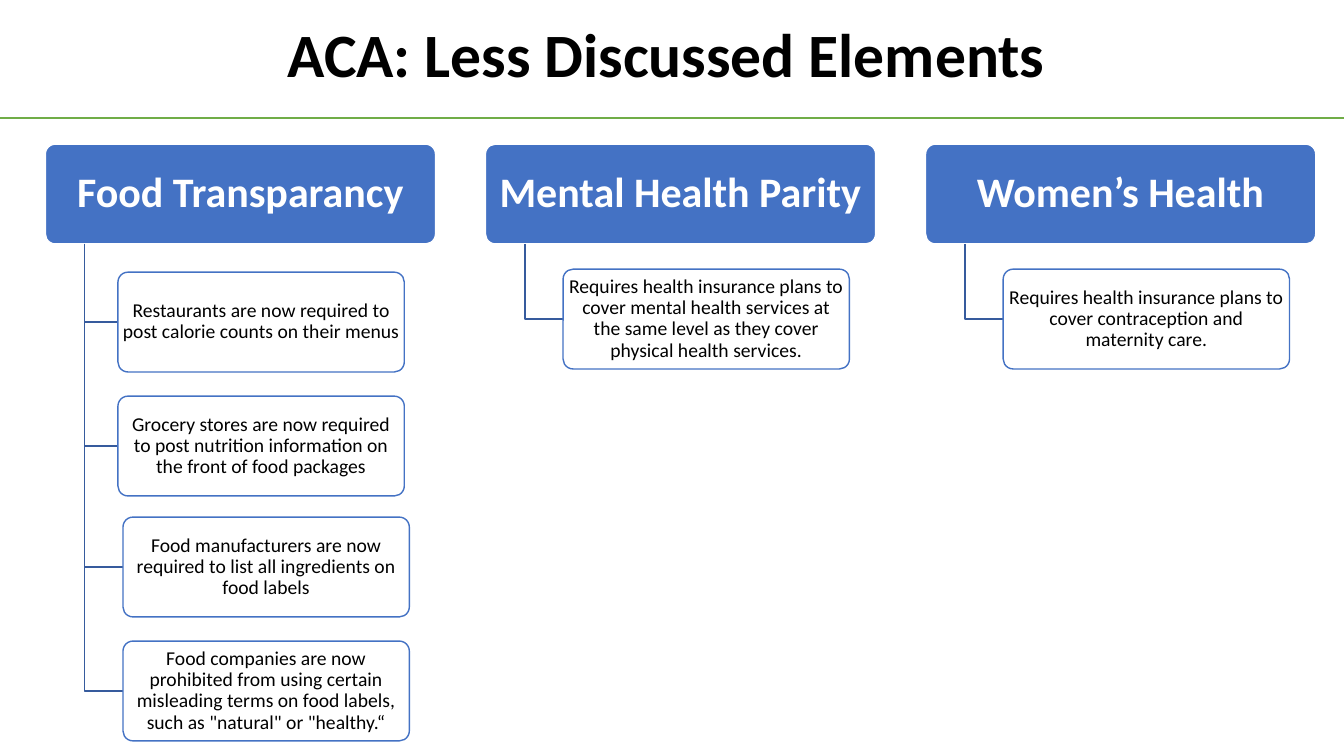
import pptx
import pptx.dml.color
import pptx.enum.shapes
import pptx.enum.text
import pptx.oxml.ns
import pptx.util
from lxml import etree

Inches = pptx.util.Inches
Pt = pptx.util.Pt
ALIGN = pptx.enum.text.PP_ALIGN
MIDDLE = pptx.enum.text.MSO_ANCHOR.MIDDLE

COLUMN_LEFT, COLUMN_STEP = 0.45, 4.365
HEADER_TOP, HEADER_W, BOX_H = 1.43, 3.87, 0.99
ITEM_W, STEM_INDENT = 2.84, 0.39

COLUMNS = [
    ("Food Transparancy", [
        (0.72, 2.7, "Restaurants are now required to post calorie counts on their menus"),
        (0.72, 3.93, "Grocery stores are now required to post nutrition information on "
                     "the front of food packages"),
        (0.77, 5.13, "Food manufacturers are now required to list all ingredients on food labels"),
        (0.77, 6.36, "Food companies are now prohibited from using certain misleading terms "
                     "on food labels, such as \"natural\" or \"healthy.“"),
    ]),
    ("Mental Health Parity", [
        (0.77, 2.67, "Requires health insurance plans to cover mental health services at "
                     "the same level as they cover physical health services."),
    ]),
    ("Women’s Health", [
        (0.77, 2.67, "Requires health insurance plans to cover contraception and maternity care."),
    ]),
]


def rgb(value):
    return pptx.dml.color.RGBColor.from_string(value)


def apply(target, values):
    for name, value in values.items():
        setattr(target, name, value)


class Deck:
    font = "Calibri"
    accent, stem_color, rule_color = "4472C4", "365B9D", "70AD47"
    header = {"size": Pt(30), "bold": True}
    item = {"size": Pt(14), "bold": False}
    heading = {"size": Pt(44), "bold": True}

    def __init__(self, prs):
        self.s = prs.slides.add_slide(prs.slide_layouts[5])

    def text(self, sp, words, style, color, align, inset):
        tf = sp.text_frame
        apply(tf, {
            "word_wrap": True,
            "auto_size": pptx.enum.text.MSO_AUTO_SIZE.NONE,
            "vertical_anchor": MIDDLE,
            "margin_left": Inches(inset[0]), "margin_right": Inches(inset[0]),
            "margin_top": Inches(inset[1]), "margin_bottom": Inches(inset[1]),
        })
        p = tf.paragraphs[0]
        apply(p, {"alignment": align, "line_spacing": 0.9})
        r = p.add_run()
        r.text = words
        apply(r.font, {"name": self.font, **style})
        r.font.color.rgb = rgb(color)

    def title(self, words):
        sp = self.s.shapes.title
        apply(sp, {"left": Inches(2.75), "top": Inches(0.15),
                   "width": Inches(10), "height": Inches(0.85)})
        self.text(sp, words, self.heading, "000000", ALIGN.LEFT, (0.1, 0.05))

    def rule(self, y):
        cx = self.s.shapes.add_connector(
            pptx.enum.shapes.MSO_CONNECTOR.STRAIGHT,
            0, Inches(y), Inches(13.33), Inches(y))
        cx.line.color.rgb = rgb(self.rule_color)
        cx.line.width = Pt(1.25)
        etree.SubElement(cx._element.spPr, pptx.oxml.ns.qn("a:effectLst"))

    def box(self, x, y, w, words, style, fill, line, color, inset, opacity=100):
        sp = self.s.shapes.add_shape(
            pptx.enum.shapes.MSO_SHAPE.ROUNDED_RECTANGLE,
            Inches(x), Inches(y), Inches(w), Inches(BOX_H))
        sp.adjustments[0] = 0.1
        sp.shadow.inherit = False
        sp.fill.solid()
        sp.fill.fore_color.rgb = rgb(fill)
        if opacity < 100:
            clr = sp._element.spPr.find(".//" + pptx.oxml.ns.qn("a:srgbClr"))
            etree.SubElement(clr, pptx.oxml.ns.qn("a:alpha"), val=str(opacity * 1000))
        sp.line.color.rgb = rgb(line)
        sp.line.width = Pt(1)
        self.text(sp, words, style, color, ALIGN.CENTER, inset)

    def elbow(self, x, top, right, bottom):
        fb = self.s.shapes.build_freeform(Inches(x), Inches(top))
        fb.add_line_segments([(Inches(x), Inches(bottom)),
                              (Inches(right), Inches(bottom))], close=False)
        sp = fb.convert_to_shape()
        sp.shadow.inherit = False
        sp.fill.background()
        sp.line.color.rgb = rgb(self.stem_color)
        sp.line.width = Pt(1)

    def column(self, x, name, items):
        self.box(x, HEADER_TOP, HEADER_W, name, self.header,
                 self.accent, "FFFFFF", "FFFFFF", (0.06, 0.04))
        for indent, y, words in items:
            self.elbow(x + STEM_INDENT, HEADER_TOP + BOX_H, x + indent, y + BOX_H / 2)
            self.box(x + indent, y, ITEM_W, words, self.item,
                     "FFFFFF", self.accent, "000000", (0.02, 0.02), opacity=90)


def main():
    prs = pptx.Presentation()
    prs.slide_width, prs.slide_height = Inches(13.33), Inches(7.5)
    deck = Deck(prs)
    deck.rule(1.17)
    deck.title("ACA: Less Discussed Elements")
    for i, (name, items) in enumerate(COLUMNS):
        deck.column(COLUMN_LEFT + i * COLUMN_STEP, name, items)
    prs.save("out.pptx")


if __name__ == "__main__":
    main()
